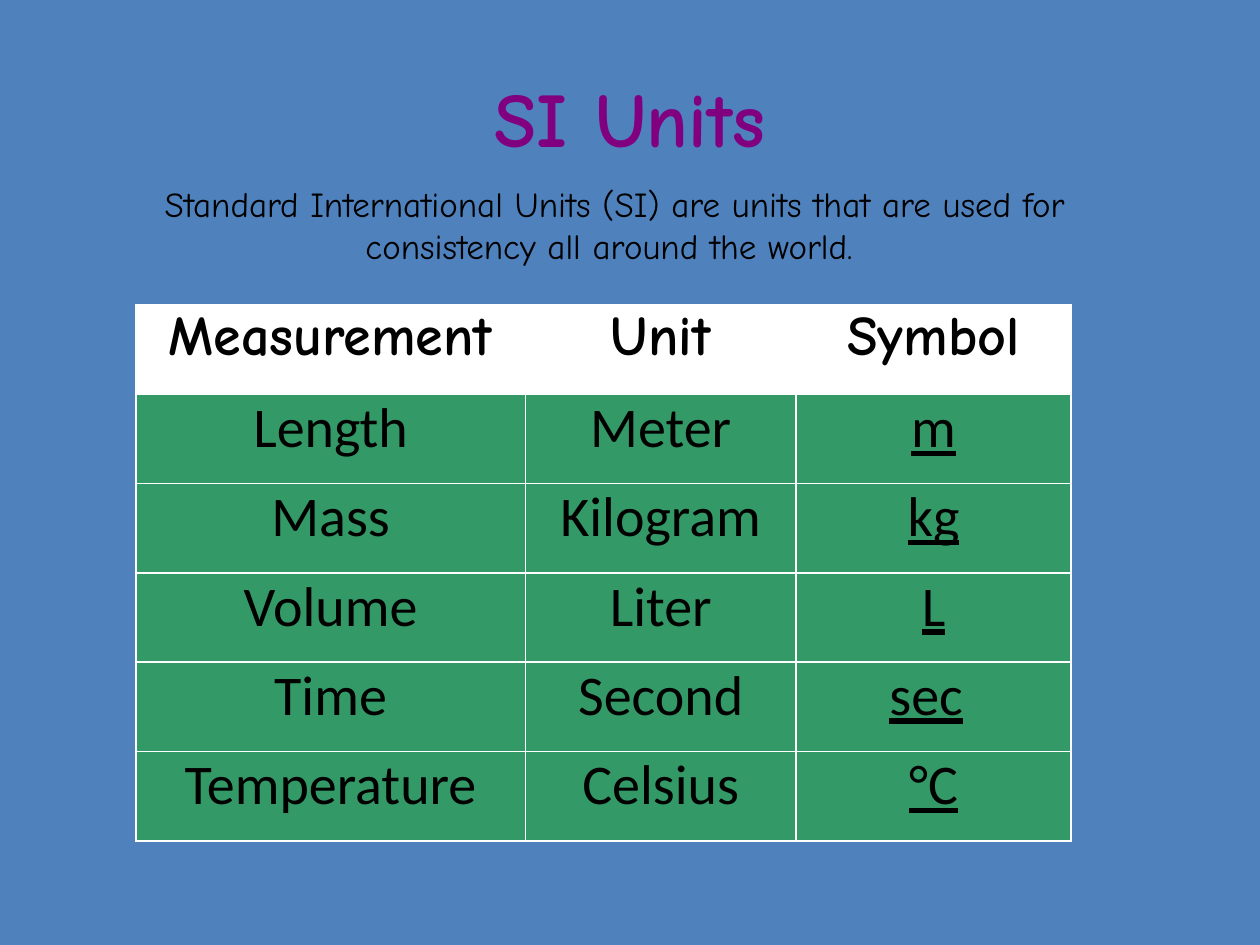
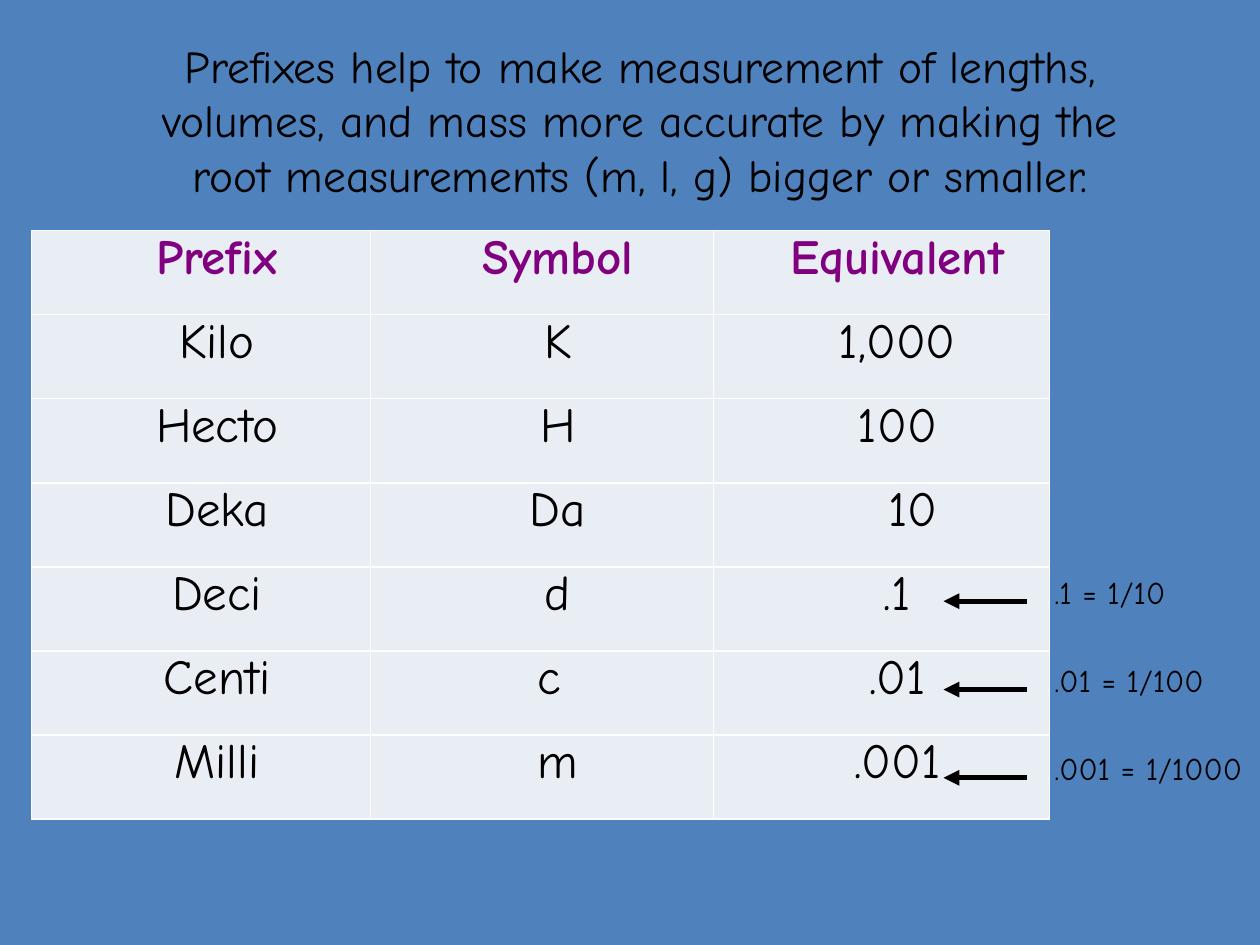
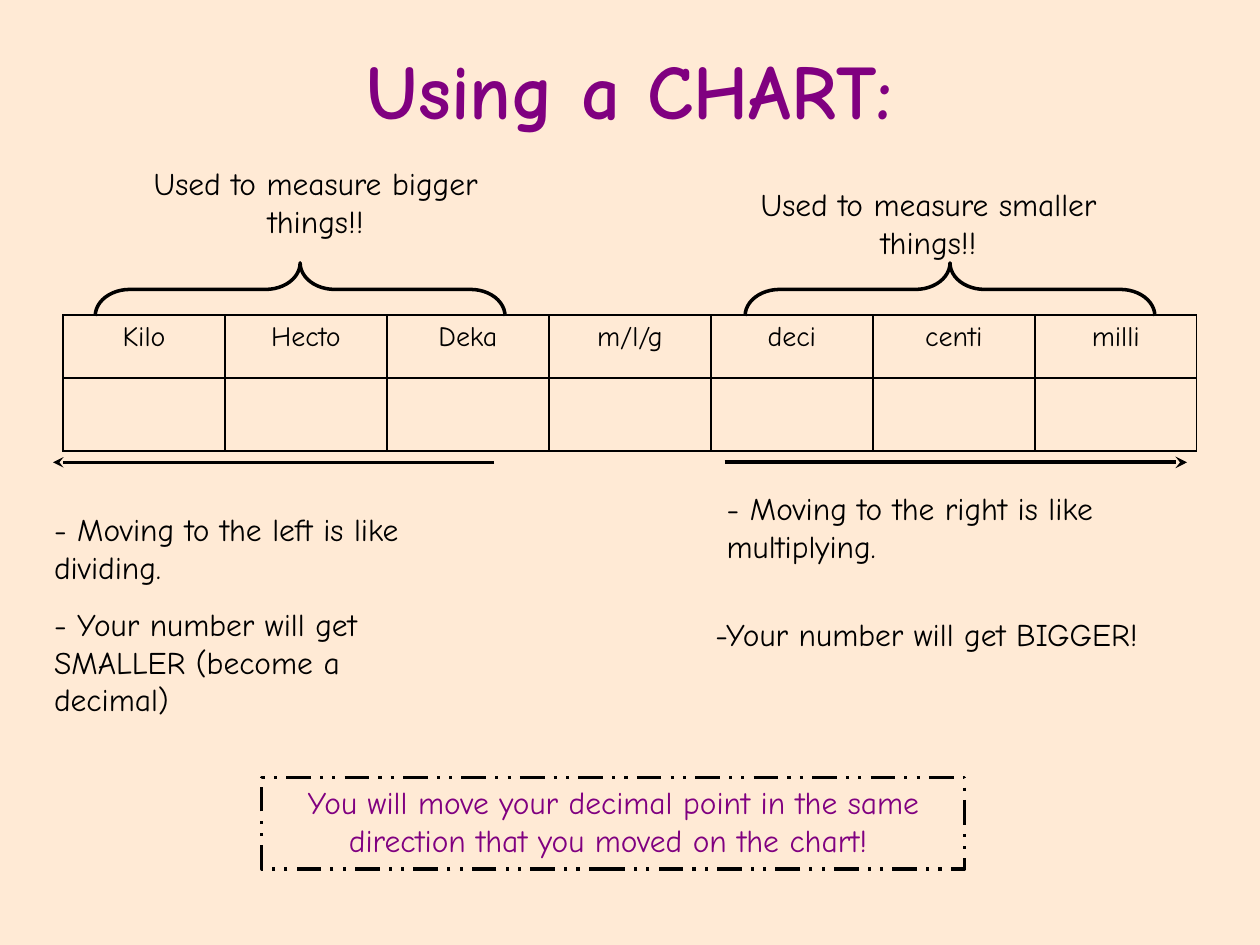
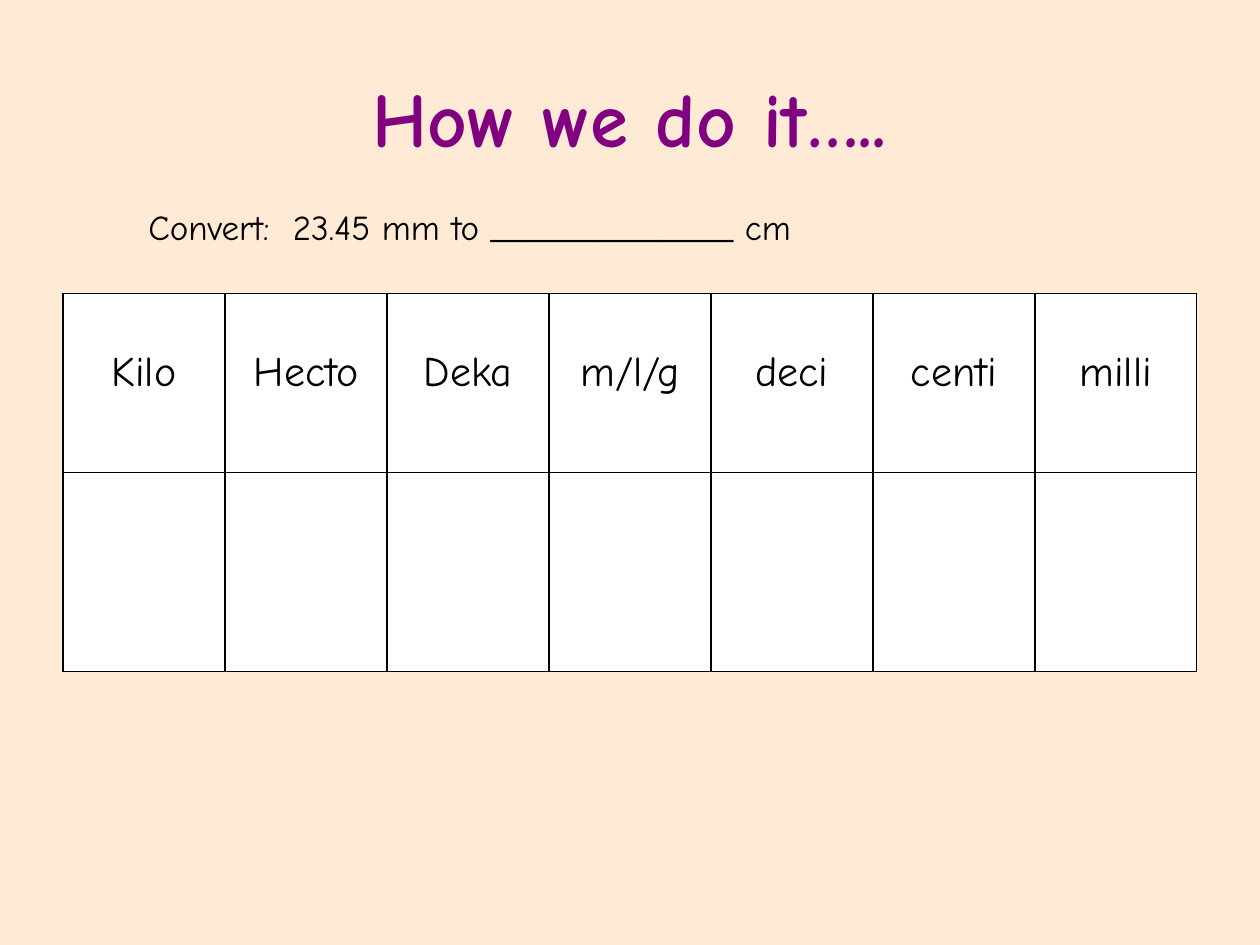
import itertools

import pptx
import pptx.dml.color
import pptx.enum.dml
import pptx.enum.shapes
import pptx.enum.text
import pptx.oxml
import pptx.oxml.ns
import pptx.util

Cm = pptx.util.Cm
Pt = pptx.util.Pt
RGBColor = pptx.dml.color.RGBColor
ALIGN = pptx.enum.text.PP_ALIGN
ANCHOR = pptx.enum.text.MSO_ANCHOR

BLUE = RGBColor(0x4F, 0x81, 0xBD)
PEACH = RGBColor(0xFF, 0xEA, 0xD5)
PURPLE = RGBColor(0x80, 0x00, 0x80)
GREEN = RGBColor(0x33, 0x99, 0x66)
PALE = RGBColor(0xE9, 0xED, 0xF4)
GREY = RGBColor(0x80, 0x80, 0x80)
WHITE = RGBColor(0xFF, 0xFF, 0xFF)
BLACK = RGBColor(0x00, 0x00, 0x00)

HAND_FONT = "Comic Neue"
PLAIN_FONT = "Calibri"
PREFIX_ROW = ["Kilo", "Hecto", "Deka", "m/l/g", "deci", "centi", "milli"]
UNIT_ROWS = [
    ["Measurement", "Unit", "Symbol"],
    ["Length", "Meter", "m"],
    ["Mass", "Kilogram", "kg"],
    ["Volume", "Liter", "L"],
    ["Time", "Second", "sec"],
    ["Temperature", "Celsius", "°C"],
]
PREFIX_ROWS = [
    ["Prefix", "Symbol", "Equivalent"],
    ["Kilo", "K", "1,000"],
    ["Hecto", "H", "100"],
    ["Deka", "Da", "10"],
    ["Deci", "d", ".1"],
    ["Centi", "c ", ".01"],
    ["Milli", "m", ".001"],
]


def xml(name, content="", **attributes):
    """Make one DrawingML element."""
    listed = " ".join(f'{key}="{value}"' for key, value in attributes.items())
    return pptx.oxml.parse_xml(
        f"<a:{name} {pptx.oxml.ns.nsdecls('a')} {listed}>{content}</a:{name}>")


def write(frame, text, size=18, color=BLACK, font=HAND_FONT, bold=False,
          underline=False, align=ALIGN.LEFT, indent=0, shadow=False, first=True):
    """Write one formatted paragraph into a text frame and return it."""
    para = frame.paragraphs[0] if first else frame.add_paragraph()
    para.alignment = align
    if indent:
        properties = para._p.get_or_add_pPr()
        properties.set("marL", str(Cm(indent)))
        properties.set("indent", "0")
    span = para.add_run()
    span.text = text
    span.font.size = Pt(size)
    span.font.name = font
    span.font.bold = bold
    span.font.underline = underline
    span.font.color.rgb = color
    if shadow:
        effect = xml("effectLst", '<a:outerShdw dist="35921" dir="2700000">'
                     f'<a:srgbClr val="{GREY}"/></a:outerShdw>')
        span._r.rPr.find(pptx.oxml.ns.qn("a:solidFill")).addnext(effect)
    return para


def text_box(page, box, text, anchor=ANCHOR.TOP, **style):
    """Add a wrapping text box with one paragraph."""
    frame = page.shapes.add_textbox(*map(Cm, box)).text_frame
    frame.word_wrap = True
    frame.vertical_anchor = anchor
    write(frame, text, **style)


def title(page, text, top=0.76, shadow=True):
    """Add the shared slide title."""
    text_box(page, (1.27, top, 22.86, 3.18), text, ANCHOR.MIDDLE, size=44,
             color=PURPLE, bold=True, align=ALIGN.CENTER, shadow=shadow)


def arrow(page, start, end, y, width, head):
    """Add a horizontal black arrow."""
    line = page.shapes.add_connector(
        pptx.enum.shapes.MSO_CONNECTOR.STRAIGHT, Cm(start), Cm(y), Cm(end), Cm(y))
    line.line.color.rgb = BLACK
    line.line.width = Pt(width)
    line.line._get_or_add_ln().append(xml("tailEnd", type=head))
    line._element.spPr.append(xml("effectLst"))


def outline(page, kind, box, width):
    """Add an unfilled black preset shape."""
    shape = page.shapes.add_shape(kind, *map(Cm, box))
    shape.shadow.inherit = False
    shape.fill.background()
    shape.line.color.rgb = BLACK
    shape.line.width = Pt(width)
    return shape


def border(cell, color):
    """Draw a one-point border on all four sides of a cell."""
    properties = cell._tc.get_or_add_tcPr()
    for place, side in enumerate("LRTB"):
        paint = f'<a:solidFill><a:srgbClr val="{color}"/></a:solidFill>'
        properties.insert(place, xml(f"ln{side}", paint, w=Pt(1)))


def grid(page, box, columns, rows, edge):
    """Add a plain bordered table with the given column widths and row heights."""
    table = page.shapes.add_table(len(rows), len(columns), *map(Cm, box)).table
    table.first_row = table.horz_banding = False
    for column, width in zip(table.columns, columns):
        column.width = Cm(width)
    for row, height in zip(table.rows, rows):
        row.height = Cm(height)
    for cell in table.iter_cells():
        cell.fill.background()
        border(cell, edge)
    return table


def data_table(page, box, columns, content, styles):
    """Add a three-column table; styles(row, column) gives a cell's fill and format."""
    height = box[3] / len(content)
    table = grid(page, box, columns, [height] * len(content), WHITE)
    for row, column in itertools.product(range(len(content)), range(len(columns))):
        cell = table.cell(row, column)
        cell.margin_left = cell.margin_right = 0
        cell.margin_top = cell.margin_bottom = 0
        fill, style = styles(row, column)
        cell.fill.solid()
        cell.fill.fore_color.rgb = fill
        write(cell.text_frame, content[row][column], align=ALIGN.CENTER, **style)
    return table


def prefix_chart(page, box, rows, size, fill=None, top=0.13):
    """Add the seven-column prefix chart with an empty second row."""
    count = len(PREFIX_ROW)
    table = grid(page, box, [box[2] / count] * count, rows, BLACK)
    for column, name in enumerate(PREFIX_ROW):
        cell = table.cell(0, column)
        cell.margin_top = Cm(top)
        write(cell.text_frame, name, size=size, align=ALIGN.CENTER)
    if fill is not None:
        for cell in table.iter_cells():
            cell.fill.solid()
            cell.fill.fore_color.rgb = fill


def fraction_notes(page, box):
    """Add the fractions beside the table, each with an arrow to its decimal."""
    left, top, width, height = box
    frame = page.shapes.add_textbox(
        Cm(left + 1.99), Cm(top), Cm(width - 1.99), Cm(height)).text_frame
    for place, text in enumerate([".1 = 1/10", ".01 = 1/100", ".001 = 1/1000"]):
        para = write(frame, text, first=place == 0)
        para.line_spacing = 0.7
        para.space_after = Pt(35.2)
        arrow(page, left + 1.68, left, top + 0.49 + 1.78 * place, 3, "triangle")


def chart_side(page, box, caption, notes, ends, width):
    """Add a brace filling the box, with its caption, arrow and notes around it."""
    left, top, span, height = box
    middle, centre = left + span / 2, top + height / 2
    brace = outline(page, pptx.enum.shapes.MSO_SHAPE.LEFT_BRACE,
                    (middle - height / 2, centre - span / 2, height, span), 2)
    brace.rotation = 90
    brace.adjustments[0] = 0.65
    brace.adjustments[1] = 0.5
    arrow(page, left + ends[0], left + ends[1], top + 4.02, width, "stealth")
    for place, (x, y, w, h, text) in enumerate([caption, *notes]):
        text_box(page, (left + x, top + y, w, h), text,
                 align=ALIGN.LEFT if place else ALIGN.CENTER)


def decimal_rule(page, box):
    """Add the dashed box with the rule for the decimal point."""
    shape = outline(page, pptx.enum.shapes.MSO_SHAPE.RECTANGLE, box, 1.75)
    shape.line.dash_style = pptx.enum.dml.MSO_LINE.DASH_DOT_DOT
    shape.text_frame.word_wrap = True
    shape.text_frame.vertical_anchor = ANCHOR.TOP
    write(shape.text_frame, "You will move your decimal point in the same direction "
          "that you moved on the chart! ", color=PURPLE, align=ALIGN.CENTER)


def unit_style(row, column):
    """Give the fill and text format of a cell in the unit table."""
    if row == 0:
        return WHITE, dict(size=32, bold=True)
    return GREEN, dict(size=32, font=PLAIN_FONT, underline=column == 2)


def prefix_style(row, column):
    """Give the fill and text format of a cell in the prefix table."""
    indent = 1.27 if PREFIX_ROWS[row][column] == "10" else 0.64
    return PALE, dict(size=28, bold=row == 0, indent=indent,
                      color=BLACK if row else PURPLE)


def units_slide(page):
    """Build the slide on SI units."""
    title(page, "SI Units")
    table = data_table(page, (2.74, 6.15, 18.85, 10.8), (7.85, 5.46, 5.54),
                       UNIT_ROWS, unit_style)
    table.cell(4, 2).margin_right = Cm(0.3)
    text_box(page, (2.34, 3.56, 20.12, 2.2),
             "Standard International Units (SI) are units that are used for "
             "consistency all around the world. ", size=20, align=ALIGN.CENTER)


def prefixes_slide(page):
    """Build the slide on prefixes."""
    text_box(page, (2.34, 0.64, 21.16, 3.8),
             "Prefixes help to make measurement of lengths, volumes, and mass more "
             "accurate by making the root measurements (m, l, g) bigger or smaller.",
             size=26, align=ALIGN.CENTER)
    data_table(page, (0.64, 4.65, 20.52, 11.86), (6.83, 6.91, 6.78),
               PREFIX_ROWS, prefix_style)
    fraction_notes(page, (19.02, 11.63, 6.38, 4.6))


def chart_slide(page):
    """Build the slide that explains the prefix chart."""
    title(page, "Using a CHART:", top=0.2, shadow=False)
    prefix_chart(page, (1.27, 6.35, 22.86, 2.74), (1.27, 1.47), 16)
    chart_side(page, (1.92, 5.3, 8.26, 1.07),
               (0, -2.12, 8.89, 1.78, "Used to measure bigger things!!"),
               [(-1.08, 4.86, 8.89, 1.78, "- Moving to the left is like dividing."),
                (-1.08, 6.77, 8.69, 2.54,
                 "- Your number will get SMALLER (become a decimal)")],
               (8.04, -0.85), 2)
    chart_side(page, (15.02, 5.3, 8.26, 1.07),
               (-0.21, -1.69, 7.82, 1.78, "Used to measure smaller things!!"),
               [(-0.62, 4.43, 8.89, 1.78, "- Moving to the right is like multiplying."),
                (-0.85, 6.97, 9.53, 1.78, "-Your number will get BIGGER!")],
               (-0.41, 8.91), 2.25)
    decimal_rule(page, (5.28, 15.67, 14.17, 1.85))


def example_slide(page):
    """Build the slide with the conversion example."""
    title(page, "How we do it…..")
    prefix_chart(page, (1.27, 5.92, 22.86, 7.62), (3.61, 4.01), 24, WHITE, top=1.1)
    text_box(page, (2.74, 4.01, 18.21, 1.09),
             "Convert:  23.45 mm to ______________ cm", size=20)


def main():
    """Build the deck and save it."""
    deck = pptx.Presentation()
    deck.slide_width, deck.slide_height = Cm(25.4), Cm(19.05)
    for build, color in [(units_slide, BLUE), (prefixes_slide, BLUE),
                         (chart_slide, PEACH), (example_slide, PEACH)]:
        page = deck.slides.add_slide(deck.slide_layouts[6])
        page.background.fill.solid()
        page.background.fill.fore_color.rgb = color
        build(page)
    deck.save("out.pptx")


if __name__ == "__main__":
    main()
